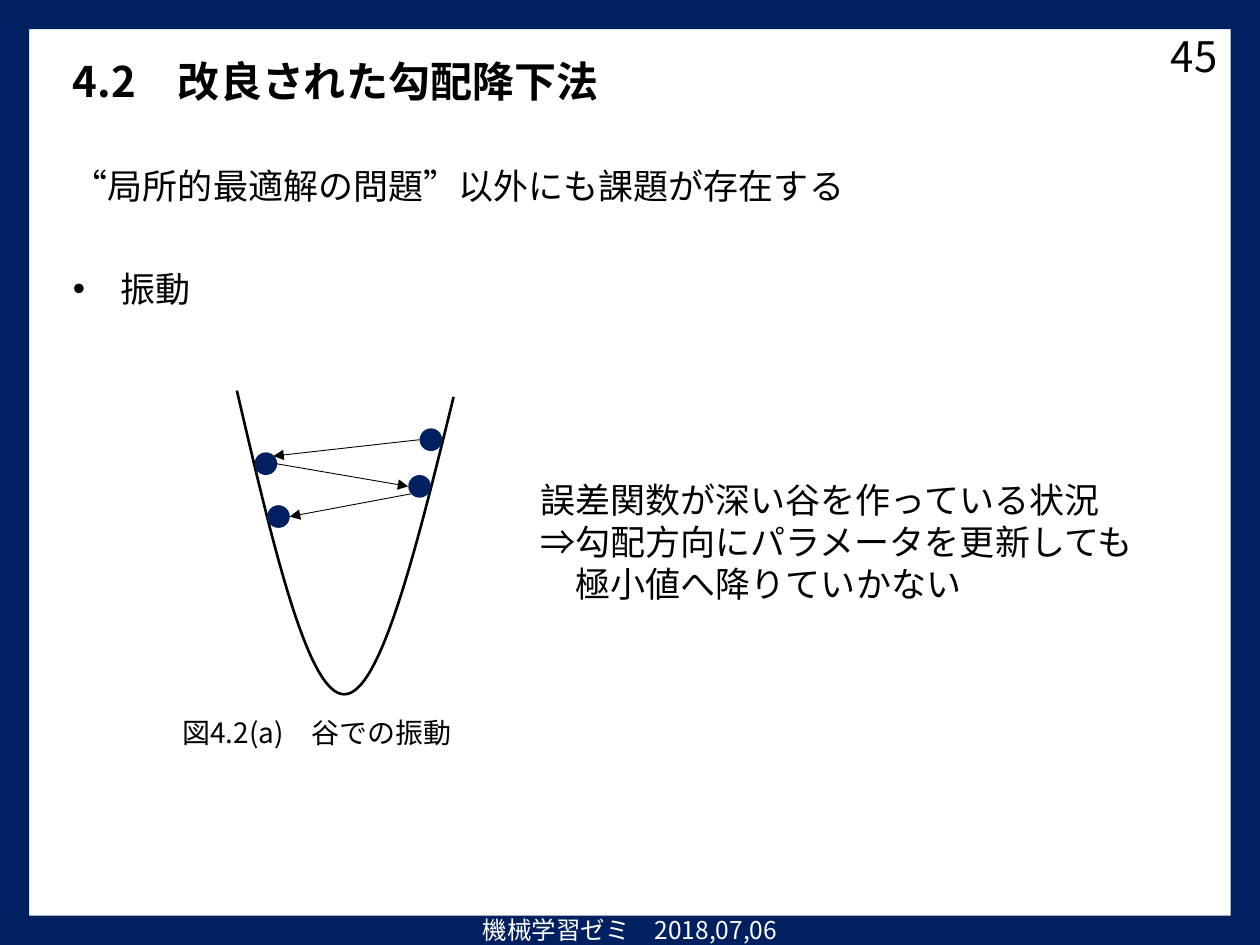
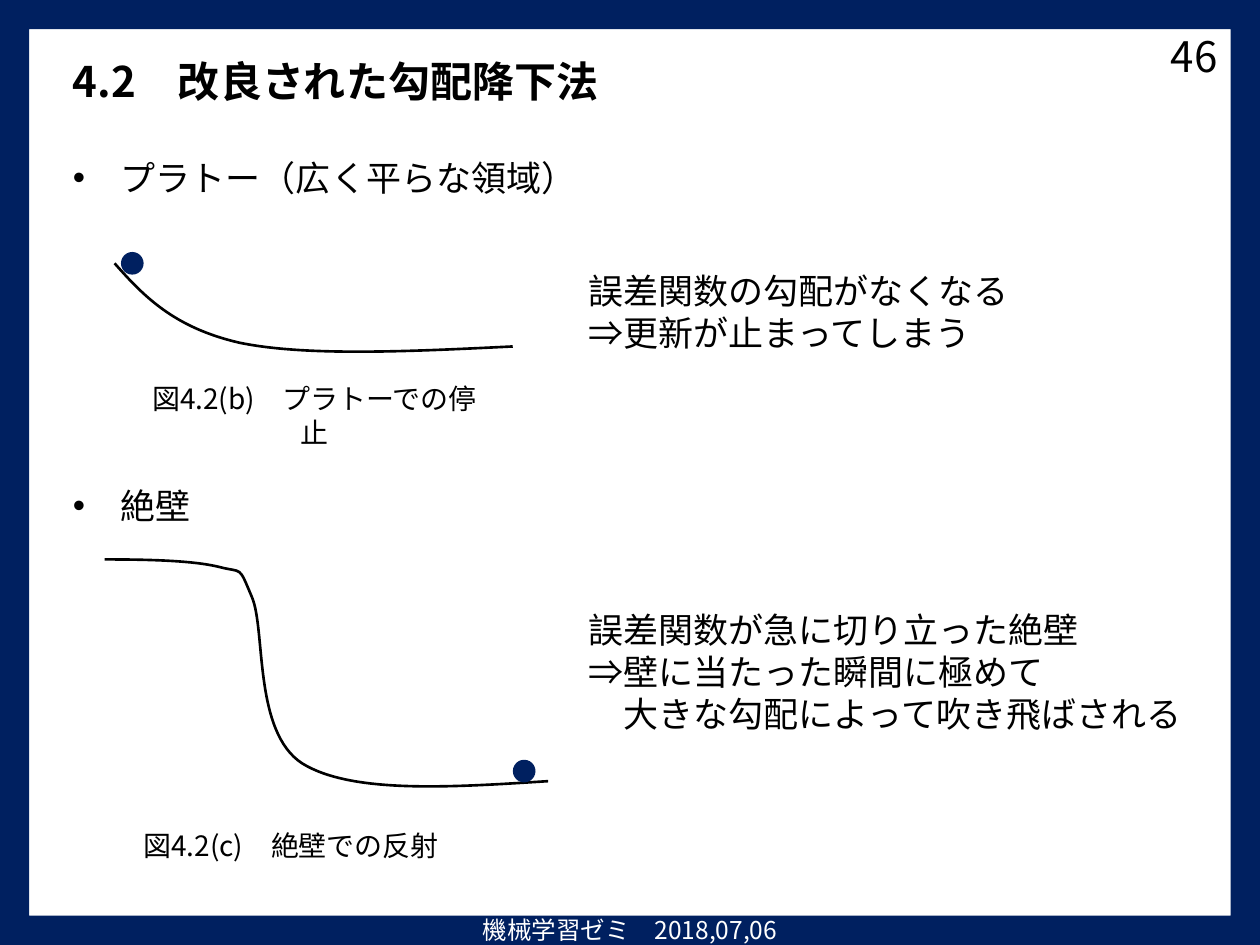
from lxml import etree
from pptx import Presentation
from pptx.dml.color import RGBColor
from pptx.enum.shapes import MSO_CONNECTOR, MSO_SHAPE
from pptx.enum.text import MSO_ANCHOR, MSO_AUTO_SIZE, PP_ALIGN
from pptx.oxml.ns import qn
from pptx.util import Inches, Pt

FRAME, OVAL = MSO_SHAPE.FRAME, MSO_SHAPE.OVAL
STRAIGHT = MSO_CONNECTOR.STRAIGHT
LEFT, CENTER, RIGHT = PP_ALIGN.LEFT, PP_ALIGN.CENTER, PP_ALIGN.RIGHT
TOP, MIDDLE = MSO_ANCHOR.TOP, MSO_ANCHOR.MIDDLE
FIT_SHAPE = MSO_AUTO_SIZE.SHAPE_TO_FIT_TEXT

COLORS = {"navy": "002060", "black": "000000", "white": "FFFFFF"}
FONT = "Noto Sans CJK JP"
TITLE = "4.2　改良された勾配降下法"
FOOTER = "機械学習ゼミ　2018,07,06"
MARGIN = 0.48
DOT_SIZE = 0.18
BULLET_INDENT = 0.38
CONTINUATION_INDENT = 0.28  # width of the leading arrow character


def add_text(slide, text, box, *, size=20, color="black", bold=False, align=LEFT,
             anchor=TOP, wrap=False, bullet=False, last_indent=0):
    shape = slide.shapes.add_textbox(*map(Inches, box))
    frame = shape.text_frame
    frame.word_wrap = wrap
    frame.vertical_anchor = anchor
    if anchor == TOP:
        frame.auto_size = FIT_SHAPE
    frame.text = text
    for paragraph in frame.paragraphs:
        paragraph.alignment = align
        properties = paragraph._p.get_or_add_pPr()
        if bullet:
            properties.set("marL", str(Inches(BULLET_INDENT)))
            properties.set("indent", str(-Inches(BULLET_INDENT)))
            etree.SubElement(properties, qn("a:buFont")).set("typeface", "Arial")
            etree.SubElement(properties, qn("a:buChar")).set("char", "•")
        for run in paragraph.runs:
            run.font.size = Pt(size)
            run.font.bold = bold
            run.font.color.rgb = RGBColor.from_string(COLORS[color])
            run.font.name = FONT
            east_asian = etree.SubElement(run._r.get_or_add_rPr(), qn("a:ea"))
            east_asian.set("typeface", FONT)
    if last_indent:
        properties.set("marL", str(Inches(last_indent)))


def add_curve(slide, points):
    """Draw a start point followed by three points per Bezier segment."""
    corners = [(Inches(x), Inches(y)) for x, y in points]
    builder = slide.shapes.build_freeform(*corners[0])
    builder.add_line_segments(corners[1:], close=False)
    shape = builder.convert_to_shape()
    shape.shadow.inherit = False
    shape.fill.background()
    shape.line.color.rgb = RGBColor.from_string(COLORS["black"])
    shape.line.width = Pt(1.5)
    # Join every three straight steps into one Bezier segment
    steps = list(shape._element.iter(qn("a:lnTo")))
    for index in range(0, len(steps), 3):
        bezier = etree.Element(qn("a:cubicBezTo"))
        steps[index].addprevious(bezier)
        for step in steps[index:index + 3]:
            bezier.append(step[0])
            step.getparent().remove(step)


# Content of each slide
valley = {
    "number": "45",
    "texts": [
        ("“局所的最適解の問題”以外にも課題が存在する", (MARGIN, 1.26, 6.37, 0.44), {}),
        ("振動", (MARGIN, 2.07, 1.14, 0.44), {"bullet": True}),
        ("図4.2(a)　谷での振動", (1.28, 5.63, 2.47, 0.37), {"size": 16, "align": CENTER}),
        ("誤差関数が深い谷を作っている状況\n⇒勾配方向にパラメータを更新しても\n極小値へ降りていかない",
         (4.19, 3.75, 4.97, 1.11), {"last_indent": CONTINUATION_INDENT}),
    ],
    "curves": [
        [(1.88, 3.1), (2.16, 4.3), (2.44, 5.51), (2.73, 5.51),
         (3.02, 5.52), (3.31, 4.33), (3.6, 3.15)],
    ],
    "dots": [(3.33, 3.4), (2.02, 3.59), (3.24, 3.77), (2.12, 4.01)],
    "arrows": [(3.33, 3.49, 2.17, 3.62), (2.19, 3.68, 3.24, 3.86), (3.26, 3.92, 2.3, 4.1)],
}
plateau_and_cliff = {
    "number": "46",
    "texts": [
        ("プラトー（広く平らな領域）", (MARGIN, 1.19, 4.23, 0.44), {"bullet": True}),
        ("図4.2(b)　プラトーでの停止", (1.02, 2.98, 2.95, 0.64),
         {"size": 16, "align": CENTER, "wrap": True}),
        ("誤差関数の勾配がなくなる\n⇒更新が止まってしまう", (4.57, 2.09, 3.57, 0.77), {}),
        ("絶壁", (MARGIN, 3.8, 1.14, 0.44), {"bullet": True}),
        ("図4.2(c)　絶壁での反射", (0.96, 6.53, 2.7, 0.37),
         {"size": 16, "align": CENTER, "wrap": True}),
        ("誤差関数が急に切り立った絶壁\n⇒壁に当たった瞬間に極めて\n大きな勾配によって吹き飛ばされる",
         (4.57, 4.78, 4.97, 1.11), {"last_indent": CONTINUATION_INDENT}),
    ],
    "curves": [
        [(0.91, 2.09), (1.14, 2.35), (1.38, 2.6), (1.9, 2.72),
         (2.43, 2.83), (3.25, 2.79), (4.07, 2.75)],
        [(0.83, 4.44), (1.19, 4.44), (1.54, 4.45), (1.74, 4.5),
         (1.93, 4.55), (1.89, 4.48), (2, 4.74),
         (2.11, 5), (2.01, 5.81), (2.4, 6.06),
         (2.79, 6.3), (3.57, 6.25), (4.35, 6.2)],
    ],
    "dots": [(0.96, 2), (4.07, 6.03)],
    "arrows": [],
}

presentation = Presentation()
presentation.slide_width = Inches(10)
presentation.slide_height = Inches(7.5)

for content in (valley, plateau_and_cliff):
    slide = presentation.slides.add_slide(presentation.slide_layouts[6])

    # Border, footer, page number and title
    border = slide.shapes.add_shape(FRAME, 0, 0, Inches(10), Inches(7.5))
    border.adjustments[0] = 0.031
    border.shadow.inherit = False
    border.fill.solid()
    border.fill.fore_color.rgb = RGBColor.from_string(COLORS["navy"])
    border.line.fill.background()
    add_text(slide, FOOTER, (0, 7.21, 10, 0.34), size=14, color="white",
             align=CENTER, wrap=True)
    add_text(slide, content["number"], (7.51, 0.24, 2.25, 0.4), size=24,
             align=RIGHT, anchor=MIDDLE, wrap=True)
    add_text(slide, TITLE, (MARGIN, 0.39, 4.5, 0.5), size=24, bold=True)

    # Explanations and captions
    for text, box, text_format in content["texts"]:
        add_text(slide, text, box, **text_format)

    # Error function curves
    for points in content["curves"]:
        add_curve(slide, points)

    # Parameter positions
    for left, top in content["dots"]:
        dot = slide.shapes.add_shape(OVAL, Inches(left), Inches(top),
                                     Inches(DOT_SIZE), Inches(DOT_SIZE))
        dot.shadow.inherit = False
        dot.fill.solid()
        dot.fill.fore_color.rgb = RGBColor.from_string(COLORS["navy"])
        dot.line.fill.background()

    # Update steps
    for ends in content["arrows"]:
        arrow = slide.shapes.add_connector(STRAIGHT, *map(Inches, ends))
        arrow.line.color.rgb = RGBColor.from_string(COLORS["black"])
        arrow.line.width = Pt(0.5)
        line = arrow.line._get_or_add_ln()
        etree.SubElement(line, qn("a:tailEnd")).set("type", "triangle")
        etree.SubElement(arrow._element.spPr, qn("a:effectLst"))

presentation.save("out.pptx")
